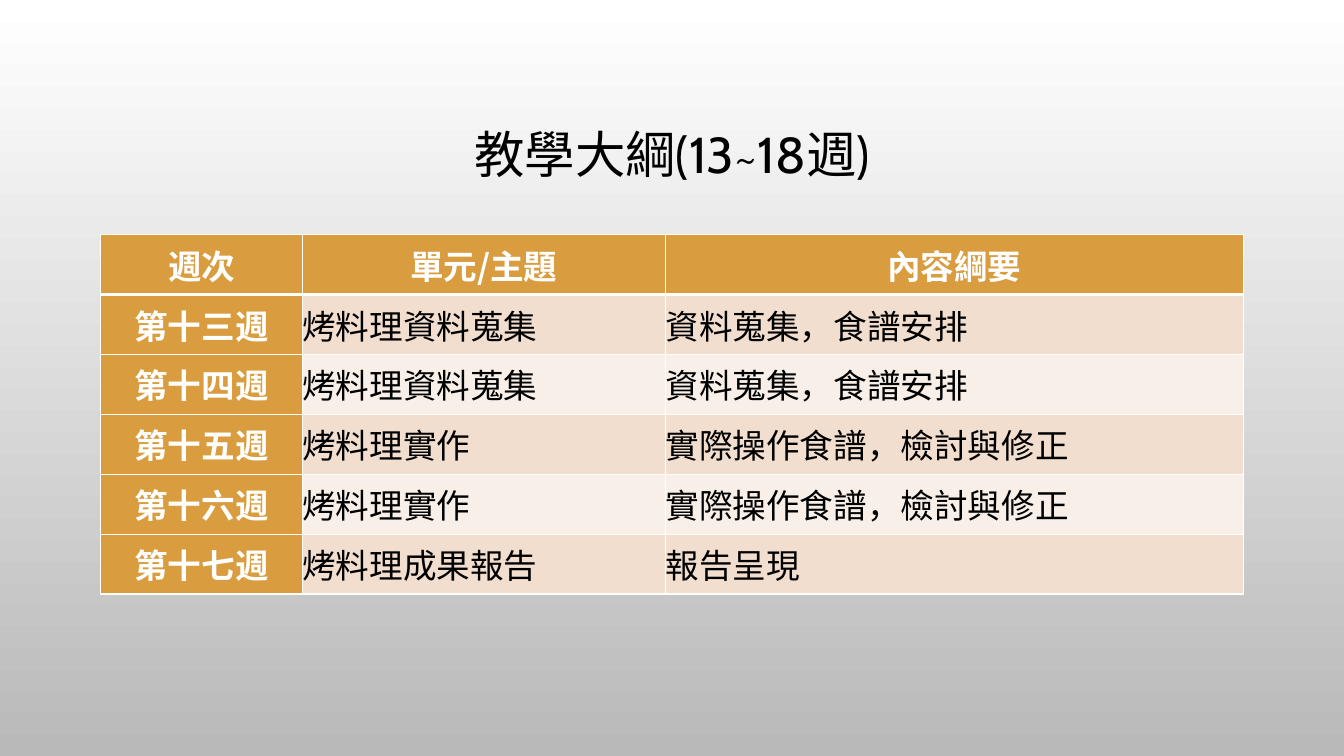
from lxml import etree
from pptx import Presentation
from pptx import util as u
from pptx.dml import color
from pptx.enum import text
from pptx.oxml import ns

TABLE_FONT = "Noto Sans CJK SC"
WHITE, BLACK, GOLD = "FFFFFF", "000000", "D99C3F"
BANDS = ("F1DECF", "F8EFE8")
COLUMN_WIDTHS = (5.08, 9.15, 14.56)
ROW_HEIGHT = 1.51
SYLLABUS = (
    ("週次", "單元/主題", "內容綱要"),
    ("第十三週", "烤料理資料蒐集", "資料蒐集，食譜安排"),
    ("第十四週", "烤料理資料蒐集", "資料蒐集，食譜安排"),
    ("第十五週", "烤料理實作", "實際操作食譜，檢討與修正"),
    ("第十六週", "烤料理實作", "實際操作食譜，檢討與修正"),
    ("第十七週", "烤料理成果報告", "報告呈現"),
)


def rgb(value):
    return color.RGBColor.from_string(value)


def format_paragraph(paragraph, font_name, size, font_color, bold, centred):
    paragraph.alignment = text.PP_ALIGN.CENTER if centred else text.PP_ALIGN.LEFT
    for run in paragraph.runs:
        run.font.name = font_name
        run.font.size = u.Pt(size)
        run.font.bold = bold
        run.font.color.rgb = rgb(font_color)
        east_asian = etree.SubElement(run.font._element, ns.qn("a:ea"))
        east_asian.set("typeface", TABLE_FONT)


def set_borders(cell, bottom_width):
    properties = cell._tc.get_or_add_tcPr()
    widths = {"L": 1, "R": 1, "T": 1, "B": bottom_width}
    for index, (side, width) in enumerate(widths.items()):
        line = etree.Element(ns.qn(f"a:ln{side}"), w=str(u.Pt(width)))
        fill = etree.SubElement(line, ns.qn("a:solidFill"))
        etree.SubElement(fill, ns.qn("a:srgbClr"), val=WHITE)
        properties.insert(index, line)


def paint_background(slide):
    fill = slide.background.fill
    fill.gradient()
    fill.gradient_angle = 270
    for stop, position, value in zip(fill.gradient_stops, (0, 1), (WHITE, "B9B9B9")):
        stop.position = position
        stop.color.rgb = rgb(value)


def add_title(slide, left, top, width, height):
    shape = slide.shapes.add_textbox(left, top, width, height)
    frame = shape.text_frame
    frame.word_wrap = True
    frame.vertical_anchor = text.MSO_ANCHOR.MIDDLE
    frame.text = "教學大綱(13~18週)"
    paragraph = frame.paragraphs[0]
    paragraph.line_spacing = 0.9
    format_paragraph(paragraph, "Cabin", 36, BLACK, False, True)


def add_syllabus(slide, left, top, width, height):
    shape = slide.shapes.add_table(
        len(SYLLABUS), len(COLUMN_WIDTHS), left, top, width, height)
    table = shape.table
    for column, column_width in zip(table.columns, COLUMN_WIDTHS):
        column.width = u.Cm(column_width)
    for row_index, labels in enumerate(SYLLABUS):
        table.rows[row_index].height = u.Cm(ROW_HEIGHT)
        for column_index, label in enumerate(labels):
            cell = table.cell(row_index, column_index)
            heading = row_index == 0 or column_index == 0
            cell.text = label
            cell.vertical_anchor = text.MSO_ANCHOR.MIDDLE
            cell.margin_left = cell.margin_right = 0
            cell.margin_top = cell.margin_bottom = 0
            cell.fill.solid()
            cell.fill.fore_color.rgb = rgb(
                GOLD if heading else BANDS[(row_index - 1) % 2])
            set_borders(cell, 3 if row_index == 0 else 1)
            format_paragraph(cell.text_frame.paragraphs[0], TABLE_FONT, 24,
                             WHITE if heading else BLACK, heading, heading)


def main():
    presentation = Presentation()
    presentation.slide_width = u.Cm(33.87)
    presentation.slide_height = u.Cm(19.05)
    slide = presentation.slides.add_slide(presentation.slide_layouts[6])
    left = u.Cm(2.54)
    width = u.Cm(sum(COLUMN_WIDTHS))
    paint_background(slide)
    add_title(slide, left, u.Cm(1.73), width, u.Cm(4.44))
    add_syllabus(slide, left, u.Cm(5.91), width, u.Cm(ROW_HEIGHT * len(SYLLABUS)))
    presentation.save("out.pptx")


if __name__ == "__main__":
    main()
